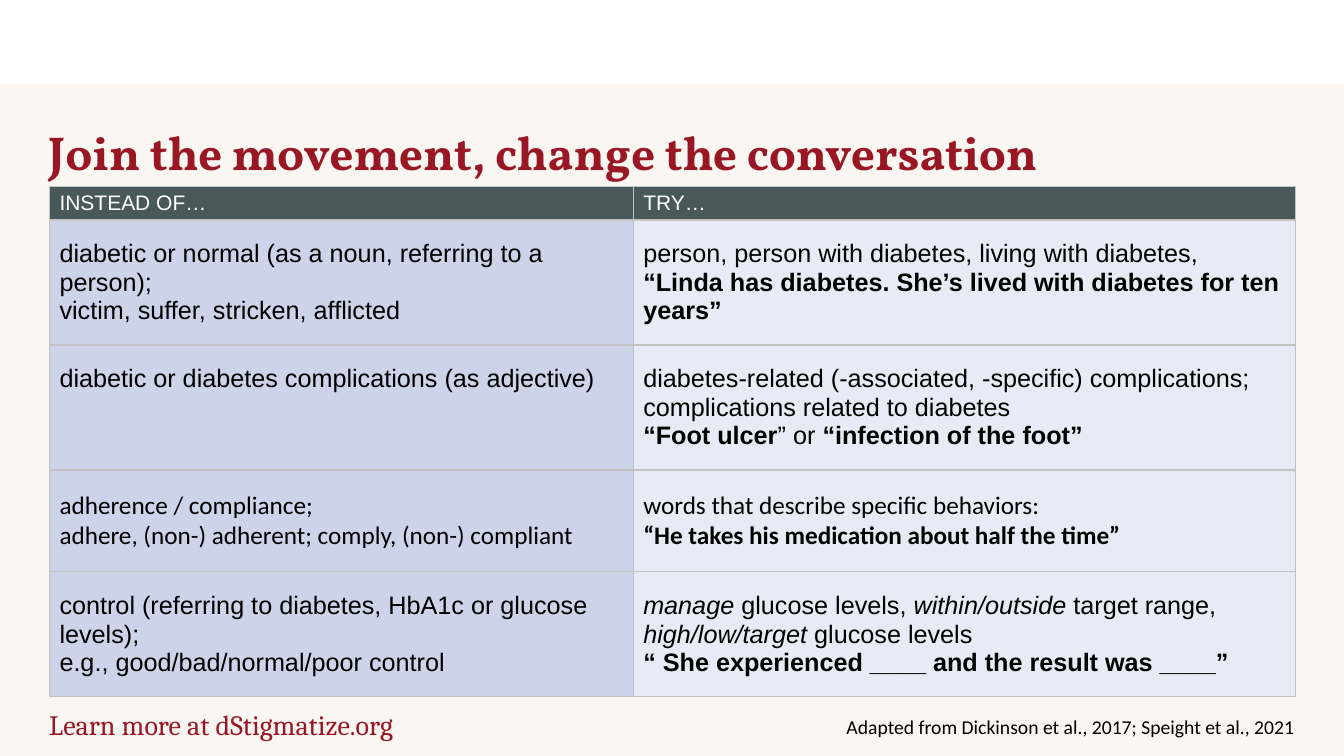
import pptx
import pptx.dml.color
import pptx.enum.shapes
import pptx.enum.text
import pptx.oxml
import pptx.oxml.ns
import pptx.util
from pptx.util import Inches

COLORS = {
    "cream": "FAF6F1", "red": "991724", "black": "000000", "white": "FFFFFF",
    "header": "495859", "instead": "CDD4EA", "try": "E8EBF5", "border": "C2C2C2",
}
BREAK = "\n"

# Each cell is a list of paragraphs; each paragraph is a list of (text, style) runs.
# Style: "" plain, "b" bold, "i" italic.
HEADER = ["INSTEAD OF…", "TRY…"]
ROWS = [
    ("Arial", 1.24,
     [[("diabetic or normal (as a noun, referring to a person); ", ""), (BREAK, ""),
       ("victim, suffer, stricken, afflicted", "")]],
     [[("person, person with diabetes, living with diabetes,", "")],
      [("“Linda has diabetes. She’s lived with diabetes for ten years”", "b")]]),
    ("Arial", 1.24,
     [[("diabetic or diabetes complications (as adjective)", "")]],
     [[("diabetes-related (-associated, -specific) complications;", "")],
      [("complications related to diabetes", "")],
      [("“Foot ulcer", "b"), ("” or ", ""), ("“infection of the foot”", "b")]]),
    ("Calibri", 1.01,
     [[("adherence / compliance;", "")],
      [("adhere, (non-) adherent; comply, (non-) compliant", "")]],
     [[("words that describe specific behaviors: ", ""), (BREAK, ""),
       ("“He takes his medication about half the time”", "b")]]),
    ("Arial", 1.24,
     [[("control (referring to diabetes, HbA1c or glucose levels);", "")],
      [("e.g., good/bad/normal/poor control", "")]],
     [[("manage ", "i"), ("glucose levels, ", ""), ("within/outside ", "i"),
       ("target range,", "")],
      [("high/low/target", "i"), (" glucose levels", "")],
      [("“ She experienced ____ and the result was ____”", "b")]]),
]


def rgb(name):
    return pptx.dml.color.RGBColor.from_string(COLORS[name])


def set_font(p, name, size, color, bold=None):
    p.font.name = name
    p.font.size = pptx.util.Pt(size)
    p.font.color.rgb = rgb(color)
    p.font.bold = bold


def add_band(slide, x, y, w, h, color):
    sp = slide.shapes.add_shape(pptx.enum.shapes.MSO_SHAPE.RECTANGLE,
                                Inches(x), Inches(y), Inches(w), Inches(h))
    sp.shadow.inherit = False
    sp.fill.solid()
    sp.fill.fore_color.rgb = rgb(color)
    sp.line.fill.background()


def add_label(slide, x, y, w, h, text, font, size, color, bold=False, right=False):
    tf = slide.shapes.add_textbox(Inches(x), Inches(y), Inches(w), Inches(h)).text_frame
    tf.word_wrap = True
    p = tf.paragraphs[0]
    p.text = text
    if right:
        p.alignment = pptx.enum.text.PP_ALIGN.RIGHT
    set_font(p, font, size, color, bold)


def set_borders(cell):
    tcPr = cell._tc.get_or_add_tcPr()
    for i, side in enumerate(("lnL", "lnR", "lnT", "lnB")):
        tcPr.insert(i, pptx.oxml.parse_xml(
            f'<a:{side} {pptx.oxml.ns.nsdecls("a")} w="12700"><a:solidFill>'
            f'<a:srgbClr val="{COLORS["border"]}"/></a:solidFill></a:{side}>'))


def fill_cell(cell, paragraphs, fill, font, size, color, margin):
    cell.margin_top = cell.margin_bottom = Inches(margin)
    cell.fill.solid()
    cell.fill.fore_color.rgb = rgb(fill)
    set_borders(cell)
    tf = cell.text_frame
    for i, runs in enumerate(paragraphs):
        p = tf.add_paragraph() if i else tf.paragraphs[0]
        set_font(p, font, size, color)
        for text, style in runs:
            if text == BREAK:
                p.add_line_break()
                continue
            r = p.add_run()
            r.text = text
            r.font.bold = style == "b"
            r.font.italic = style == "i"


def add_language_table(slide):
    table = slide.shapes.add_table(len(ROWS) + 1, 2, Inches(0.49), Inches(1.85),
                                   Inches(12.36), Inches(5.05)).table
    table.first_row = table.horz_banding = False
    for column, width in zip(table.columns, (5.79, 6.57)):
        column.width = Inches(width)

    # Header row
    table.rows[0].height = Inches(0.32)
    for c, title in enumerate(HEADER):
        fill_cell(table.cell(0, c), [[(title, "")]], "header", "Arial", 15, "white", 0.05)

    # Phrase pairs
    for i, (font, height, *pair) in enumerate(ROWS, start=1):
        table.rows[i].height = Inches(height)
        for c, (paragraphs, fill) in enumerate(zip(pair, ("instead", "try"))):
            fill_cell(table.cell(i, c), paragraphs, fill, font, 18, "black", 0.2)


def main():
    prs = pptx.Presentation()
    prs.slide_width, prs.slide_height = Inches(13.33), Inches(7.5)
    slide = prs.slides.add_slide(prs.slide_layouts[6])

    # Background and table
    add_band(slide, 0, 0.84, 13.33, 6.66, "cream")
    add_language_table(slide)

    # Title and footers
    add_label(slide, 7.65, 7.04, 5.29, 0.34,
              "Adapted from Dickinson et al., 2017; Speight et al., 2021",
              "Calibri", 14, "black", right=True)
    add_label(slide, 0.38, 1.17, 10.83, 0.67, "Join the movement, change the conversation",
              "Vollkorn", 34, "red", bold=True)
    add_label(slide, 0.39, 6.97, 4.33, 0.44, "Learn more at dStigmatize.org",
              "Cambria", 20, "red")
    prs.save("out.pptx")


if __name__ == "__main__":
    main()
